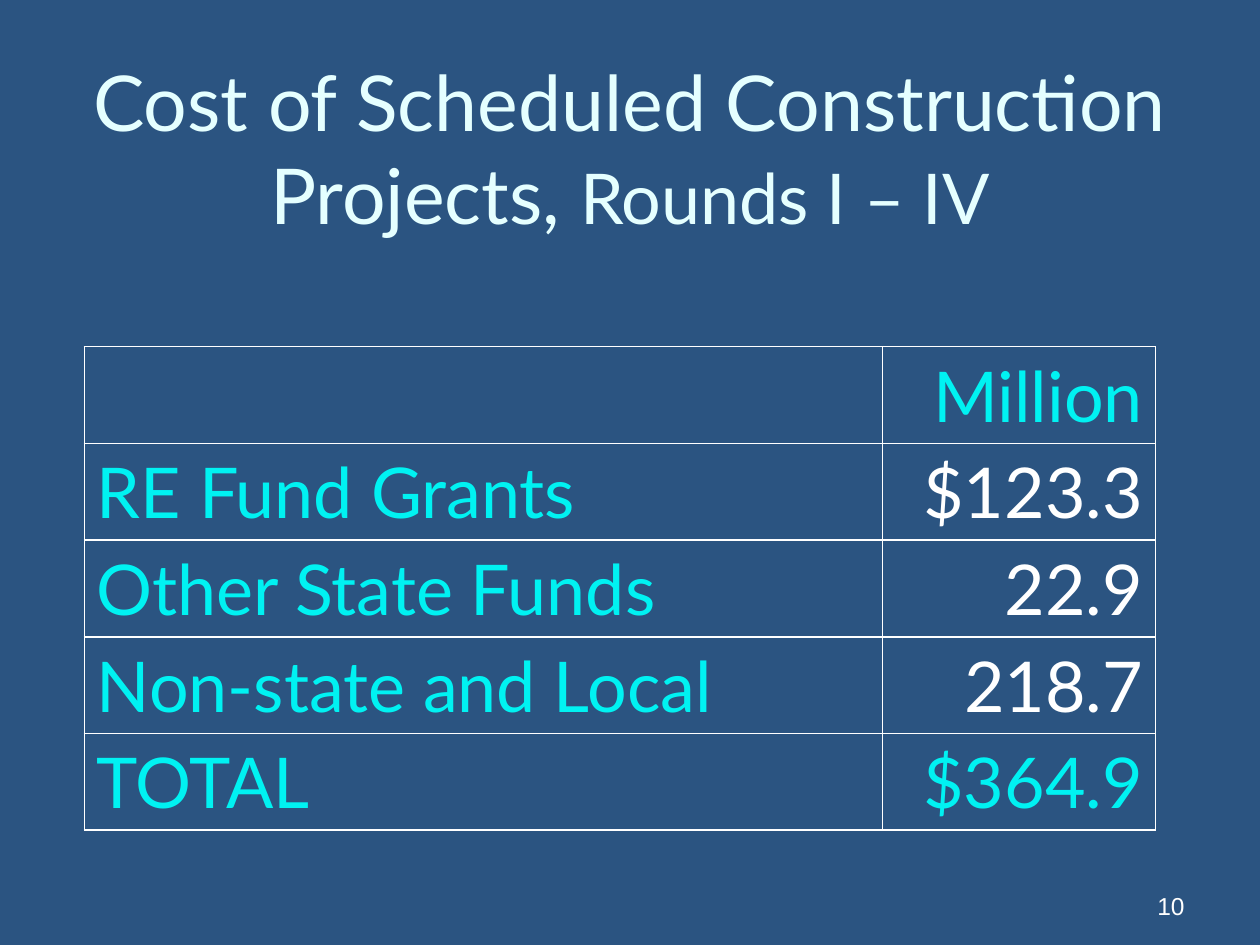
from dataclasses import dataclass

from lxml.etree import SubElement
from pptx import Presentation
from pptx.dml.color import RGBColor
from pptx.enum.text import MSO_ANCHOR, MSO_AUTO_SIZE, PP_ALIGN
from pptx.oxml.ns import qn
from pptx.util import Cm, Pt


@dataclass(frozen=True)
class Theme:
    background: RGBColor = RGBColor(0x2B, 0x54, 0x81)
    title: RGBColor = RGBColor(0xE5, 0xFF, 0xFF)
    accent: RGBColor = RGBColor(0x00, 0xF2, 0xF2)
    white: RGBColor = RGBColor(0xFF, 0xFF, 0xFF)
    font: str = "Lato"
    number_font: str = "Arial"
    title_size: Pt = Pt(44)
    body_size: Pt = Pt(40)
    number_size: Pt = Pt(14)
    border: Pt = Pt(1)


THEME = Theme()
COSTS = [
    ("", "Million"),
    ("RE Fund Grants", "$123.3"),
    ("Other State Funds", "22.9"),
    ("Non-state and Local", "218.7"),
    ("TOTAL", "$364.9"),
]


def set_font(font, name, size, color):
    font.name, font.size = name, size
    font.color.rgb = color


def add_title(page, left, top, width, height):
    title = page.shapes.title
    title.left, title.top, title.width, title.height = left, top, width, height
    frame = title.text_frame
    frame.word_wrap = True
    frame.auto_size = MSO_AUTO_SIZE.NONE
    frame.vertical_anchor = MSO_ANCHOR.MIDDLE
    para = frame.paragraphs[0]
    para.alignment = PP_ALIGN.CENTER
    for text, size in (
        ("Cost of Scheduled Construction Projects, ", THEME.title_size),
        ("Rounds I – IV", THEME.body_size),
    ):
        span = para.add_run()
        span.text = text
        set_font(span.font, THEME.font, size, THEME.title)


def add_borders(cell):
    properties = cell._tc.get_or_add_tcPr()
    for side in ("lnL", "lnR", "lnT", "lnB"):
        line = SubElement(properties, qn(f"a:{side}"), w=str(THEME.border))
        fill = SubElement(line, qn("a:solidFill"))
        SubElement(fill, qn("a:srgbClr"), val=str(THEME.white))


def add_cost_table(page, left, top, width, height):
    frame = page.shapes.add_table(len(COSTS), 2, left, top, width, height)
    table = frame.table
    table.first_row = table.horz_banding = False
    amount_width = Cm(5.5)
    table.columns[0].width = width - amount_width
    table.columns[1].width = amount_width

    for row, values in enumerate(COSTS):
        for column, text in enumerate(values):
            cell = table.cell(row, column)
            add_borders(cell)
            cell.fill.background()
            cell.text = text
            # Only the amounts between header and total are white
            is_amount = column == 1 and 0 < row < len(COSTS) - 1
            para = cell.text_frame.paragraphs[0]
            para.alignment = PP_ALIGN.RIGHT if column else PP_ALIGN.LEFT
            set_font(para.font, THEME.font, THEME.body_size,
                     THEME.white if is_amount else THEME.accent)


def add_page_number(page, number, left, top, width, height):
    box = page.shapes.add_textbox(left, top, width, height)
    frame = box.text_frame
    frame.word_wrap = True
    frame.vertical_anchor = MSO_ANCHOR.BOTTOM
    para = frame.paragraphs[0]
    para.text = number
    para.alignment = PP_ALIGN.RIGHT
    set_font(para.font, THEME.number_font, THEME.number_size, THEME.white)


def main():
    deck = Presentation()
    deck.slide_width, deck.slide_height = Cm(25.4), Cm(19.05)
    page = deck.slides.add_slide(deck.slide_layouts.get_by_name("Title Only"))
    page.background.fill.solid()
    page.background.fill.fore_color.rgb = THEME.background

    add_title(page, Cm(1.27), Cm(1.06), Cm(22.86), Cm(3.81))
    add_cost_table(page, Cm(1.7), Cm(6.99), Cm(21.59), Cm(9.74))
    add_page_number(page, "10", Cm(18.2), Cm(17.36), Cm(5.93), Cm(1.32))
    deck.save("out.pptx")


if __name__ == "__main__":
    main()
